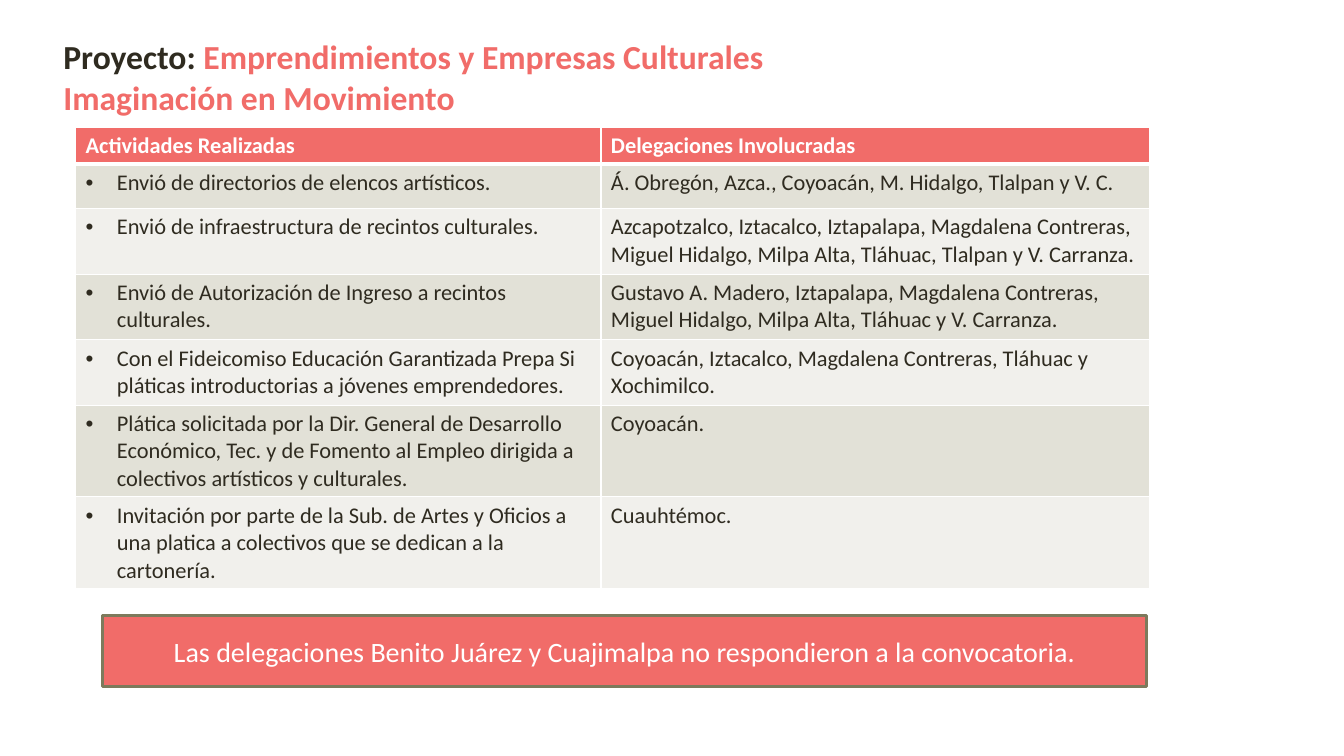
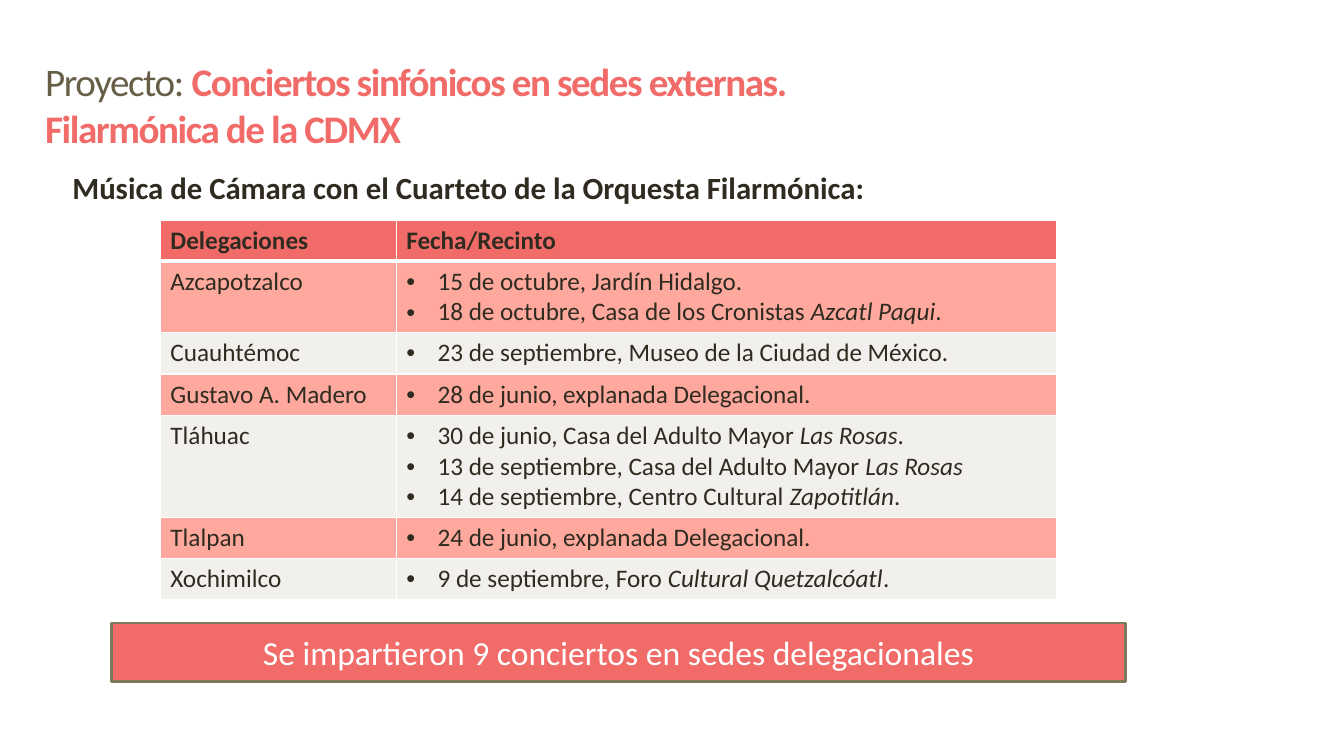
from lxml import etree
from pptx import Presentation
from pptx.dml.color import RGBColor
from pptx.enum.shapes import MSO_SHAPE
from pptx.enum.text import MSO_ANCHOR, PP_ALIGN
from pptx.oxml.ns import qn
from pptx.util import Inches, Pt

RECTANGLE = MSO_SHAPE.RECTANGLE
MIDDLE = MSO_ANCHOR.MIDDLE
CENTER = PP_ALIGN.CENTER

FONT = "Calibri"
CORAL = "F16C69"
DARK = "2F2B20"
BROWN = "675E47"
OLIVE = "7D7A5C"
WHITE = "FFFFFF"
PALE = "F1F0EC"
BORDERS = {"a:lnL": 1, "a:lnR": 1, "a:lnT": 1, "a:lnB": 1}
HEADER_BORDERS = {**BORDERS, "a:lnB": 3}
BULLET_INDENT = Inches(0.31)

# An asterisk switches italics on and off within a cell.
SLIDES = [
    {
        "title": ["Emprendimientos y Empresas Culturales", "Imaginación en Movimiento"],
        "title_box": (0.53, 0.31, 9.58, 0.91),
        "title_size": 24, "lead_color": DARK, "lead_bold": True, "spacing": 0,
        "subtitle": None,
        "table_at": (0.75, 1.26), "columns": (5.21, 5.44),
        "heights": (0.37, 0.44, 0.65, 0.65, 0.65, 0.91, 0.91),
        "table_size": 16, "header_color": WHITE, "band": "E2E1D7", "bullet_column": 0,
        "rows": [
            (["Actividades Realizadas"], ["Delegaciones Involucradas"]),
            (["Envió de directorios de elencos artísticos."],
             ["Á. Obregón, Azca., Coyoacán, M. Hidalgo, Tlalpan y V. C."]),
            (["Envió de infraestructura de recintos culturales."],
             ["Azcapotzalco, Iztacalco, Iztapalapa, Magdalena Contreras, "
              "Miguel Hidalgo, Milpa Alta, Tláhuac, Tlalpan y V. Carranza."]),
            (["Envió de Autorización de Ingreso a recintos culturales."],
             ["Gustavo A. Madero, Iztapalapa, Magdalena Contreras, "
              "Miguel Hidalgo, Milpa Alta, Tláhuac y V. Carranza."]),
            (["Con el Fideicomiso Educación Garantizada Prepa Si "
              "pláticas introductorias a jóvenes emprendedores."],
             ["Coyoacán, Iztacalco, Magdalena Contreras, Tláhuac y Xochimilco."]),
            (["Plática solicitada por la Dir. General de Desarrollo Económico, Tec. "
              "y de Fomento al Empleo dirigida a colectivos artísticos y culturales."],
             ["Coyoacán."]),
            (["Invitación por parte de la Sub. de Artes y Oficios a una platica "
              "a colectivos que se dedican a la cartonería."],
             ["Cuauhtémoc."]),
        ],
        "banner": "Las delegaciones Benito Juárez y Cuajimalpa no respondieron a la convocatoria.",
        "banner_box": (1.02, 6.11, 10.35, 0.7), "banner_size": 20,
    },
    {
        "title": ["Conciertos sinfónicos en sedes externas.", "Filarmónica de la CDMX"],
        "title_box": (0.35, 0.52, 11, 1.05),
        "title_size": 27.9, "lead_color": BROWN, "lead_bold": False, "spacing": -100,
        "subtitle": "Música de Cámara con el Cuarteto de la Orquesta Filarmónica:",
        "table_at": (1.59, 2.19), "columns": (2.34, 6.55),
        "heights": (0.4, 0.71, 0.41, 0.41, 1.01, 0.41, 0.41),
        "table_size": 18, "header_color": DARK, "band": "FFA99E", "bullet_column": 1,
        "rows": [
            (["Delegaciones"], ["Fecha/Recinto"]),
            (["Azcapotzalco"],
             ["15 de octubre, Jardín Hidalgo.",
              "18 de octubre, Casa de los Cronistas *Azcatl Paqui*."]),
            (["Cuauhtémoc"], ["23 de septiembre, Museo de la Ciudad de México."]),
            (["Gustavo A. Madero"], ["28 de junio, explanada Delegacional."]),
            (["Tláhuac"],
             ["30 de junio, Casa del Adulto Mayor *Las Rosas*.",
              "13 de septiembre, Casa del Adulto Mayor *Las Rosas*",
              "14 de septiembre, Centro Cultural *Zapotitlán*."]),
            (["Tlalpan"], ["24 de junio, explanada Delegacional."]),
            (["Xochimilco"], ["9 de septiembre, Foro *Cultural Quetzalcóatl*."]),
        ],
        "banner": "Se impartieron 9 conciertos en sedes delegacionales",
        "banner_box": (1.11, 6.18, 10.05, 0.58), "banner_size": 24,
    },
]


def paint(target, color):
    """Give a fill, or the fill of a font or line, a solid hex colour."""
    fill = getattr(target, "fill", target)
    fill.solid()
    fill.fore_color.rgb = RGBColor.from_string(color)


def style(paragraph, size, color, bold=False):
    paragraph.font.name = FONT
    paragraph.font.size = Pt(size)
    paragraph.font.bold = bold
    paint(paragraph.font, color)


presentation = Presentation()
presentation.slide_width = Inches(13.33)
presentation.slide_height = Inches(7.5)

for content in SLIDES:
    slide = presentation.slides.add_slide(presentation.slide_layouts[6])

    # Title
    frame = slide.shapes.add_textbox(*map(Inches, content["title_box"])).text_frame
    frame.word_wrap = True
    paragraph = frame.paragraphs[0]
    style(paragraph, content["title_size"], CORAL, True)
    lead = paragraph.add_run()
    lead.text = "Proyecto: "
    lead.font.bold = content["lead_bold"]
    paint(lead.font, content["lead_color"])
    first_line, second_line = content["title"]
    paragraph.add_run().text = first_line
    paragraph.add_line_break()
    paragraph.add_run().text = second_line
    for run in paragraph.runs:
        run.font._element.set("spc", str(content["spacing"]))

    # Subtitle
    if content["subtitle"]:
        frame = slide.shapes.add_textbox(
            Inches(0.62), Inches(1.62), Inches(12), Inches(0.47)).text_frame
        frame.word_wrap = True
        frame.text = content["subtitle"]
        style(frame.paragraphs[0], 22, DARK, True)

    # Table
    left, top = content["table_at"]
    rows, columns, heights = content["rows"], content["columns"], content["heights"]
    table = slide.shapes.add_table(
        len(rows), len(columns), Inches(left), Inches(top),
        Inches(sum(columns)), Inches(sum(heights))).table
    table.first_row = False
    table.horz_banding = False
    for column, width in zip(table.columns, columns):
        column.width = Inches(width)
    for row_index, (row, height) in enumerate(zip(rows, heights)):
        table.rows[row_index].height = Inches(height)
        is_header = row_index == 0
        row_fill = CORAL if is_header else content["band"] if row_index % 2 else PALE
        text_color = content["header_color"] if is_header else DARK
        for column_index, items in enumerate(row):
            cell = table.cell(row_index, column_index)
            borders = HEADER_BORDERS if is_header else dict(BORDERS)
            if row_index == 1:
                borders["a:lnT"] = 3
            cell_properties = cell._tc.get_or_add_tcPr()
            for tag, width in borders.items():
                border = etree.SubElement(cell_properties, qn(tag), w=str(Pt(width)))
                border_fill = etree.SubElement(border, qn("a:solidFill"))
                etree.SubElement(border_fill, qn("a:srgbClr"), val=WHITE)
            paint(cell, row_fill)

            frame = cell.text_frame
            for item_index, item in enumerate(items):
                paragraph = frame.add_paragraph() if item_index else frame.paragraphs[0]
                if column_index == content["bullet_column"] and not is_header:
                    properties = paragraph._p.get_or_add_pPr()
                    properties.set("marL", str(BULLET_INDENT))
                    properties.set("indent", str(-BULLET_INDENT))
                    etree.SubElement(properties, qn("a:buFont"), typeface="Arial")
                    etree.SubElement(properties, qn("a:buChar"), char="•")
                style(paragraph, content["table_size"], text_color, is_header)
                for part_index, part in enumerate(item.split("*")):
                    if part:
                        run = paragraph.add_run()
                        run.text = part
                        if part_index % 2:
                            run.font.italic = True

    # Banner
    banner = slide.shapes.add_shape(RECTANGLE, *map(Inches, content["banner_box"]))
    banner.shadow.inherit = False
    paint(banner, CORAL)
    paint(banner.line, OLIVE)
    banner.line.width = Pt(2)
    frame = banner.text_frame
    frame.vertical_anchor = MIDDLE
    frame.text = content["banner"]
    frame.paragraphs[0].alignment = CENTER
    style(frame.paragraphs[0], content["banner_size"], WHITE)

presentation.save("out.pptx")
